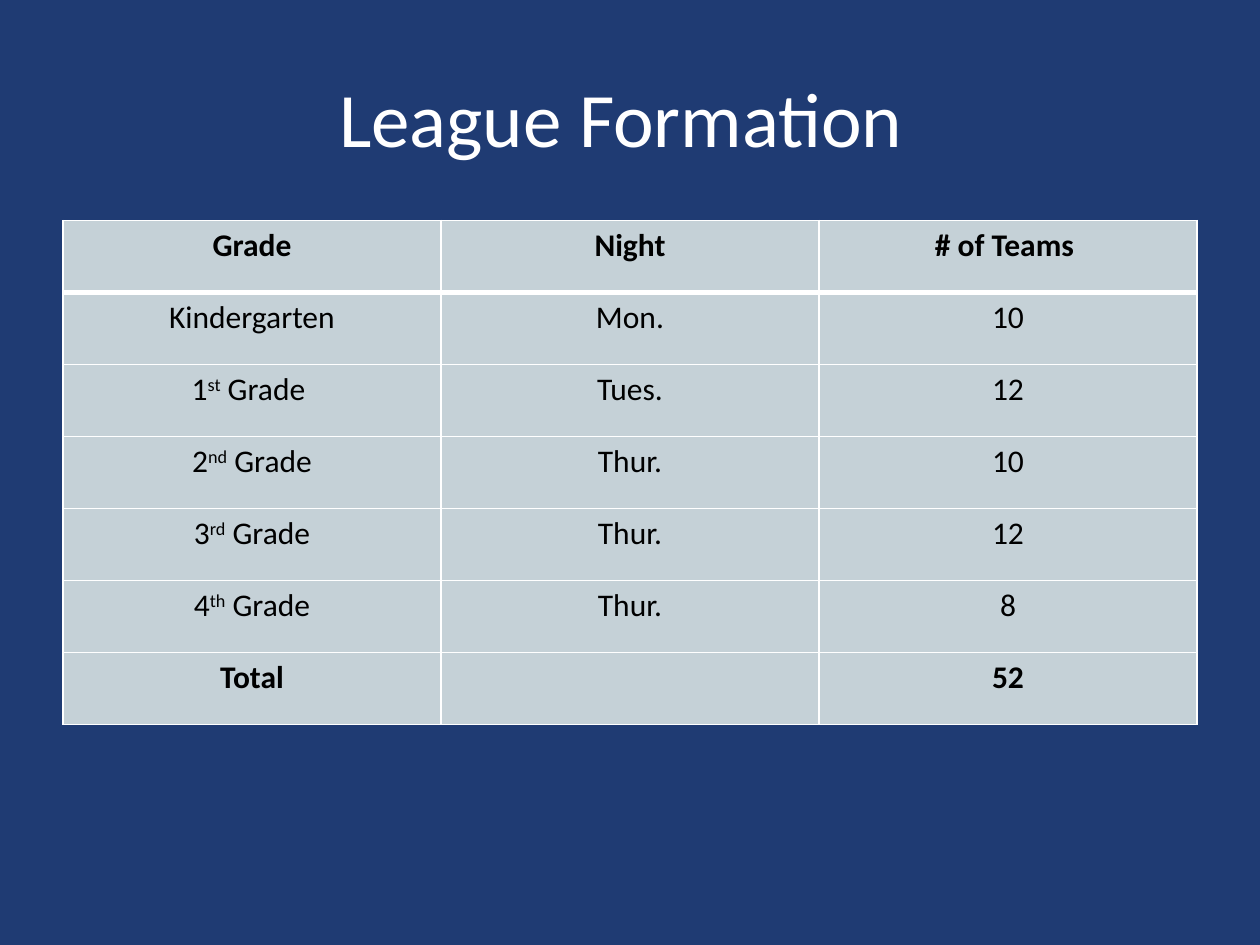
"""Build the League Formation slide with its table of grades, nights and teams."""
from lxml import etree
from pptx import Presentation
from pptx.dml.color import RGBColor
from pptx.enum.text import MSO_ANCHOR, PP_ALIGN
from pptx.oxml.ns import qn
from pptx.util import Inches, Pt

CENTER, MIDDLE = PP_ALIGN.CENTER, MSO_ANCHOR.MIDDLE

TITLE = "League Formation "
ROWS = [
    ("Grade", "Night", "# of Teams "),
    ("Kindergarten", "Mon.", "10"),
    (("1", "st", " Grade "), "Tues.", "12"),
    (("2", "nd", " Grade"), "Thur.", "10"),
    (("3", "rd", " Grade"), "Thur.", "12"),
    (("4", "th", " Grade"), "Thur.", "8"),
    ("Total", "", "52"),
]
THEME = {
    "back": "1F3B73", "cell": "C5D1D7", "line": "FFFFFF",
    "title": {"name": "Calibri", "size": Pt(44), "color": "FFFFFF"},
    "body": {"name": "Calibri", "size": Pt(18), "color": "000000", "bold": False},
    "head": {"name": "Calibri", "size": Pt(18), "color": "000000", "bold": True},
    "thin": Pt(1), "thick": Pt(3), "raise": "30000",
}
WIDE, HIGH = Inches(10), Inches(7.5)
LEFT, SPAN = WIDE // 20, WIDE * 9 // 10
TITLE_TOP, TITLE_HIGH = HIGH // 25, HIGH // 6
GRID_TOP, GRID_HIGH = Inches(1.75), Inches(4)


def style(font, look):
    for key, value in look.items():
        if key == "color":
            font.color.rgb = RGBColor.from_string(value)
        else:
            setattr(font, key, value)


def write(para, text, look):
    para.alignment = CENTER
    parts = (text,) if isinstance(text, str) else text
    for i, part in enumerate(parts):
        if part:
            run = para.add_run()
            run.text = part
            style(run.font, look)
            if i == 1:
                run.font._element.set("baseline", THEME["raise"])


def edge(cell, sides):
    props = cell._tc.get_or_add_tcPr()
    for side, width in sides.items():
        line = etree.SubElement(props, qn(f"a:ln{side}"), w=str(width))
        fill = etree.SubElement(line, qn("a:solidFill"))
        etree.SubElement(fill, qn("a:srgbClr"), val=THEME["line"])


def add_title(slide):
    frame = slide.shapes.add_textbox(LEFT, TITLE_TOP, SPAN, TITLE_HIGH).text_frame
    frame.word_wrap = True
    frame.vertical_anchor = MIDDLE
    write(frame.paragraphs[0], TITLE, THEME["title"])


def add_grid(slide):
    count = len(ROWS)
    grid = slide.shapes.add_table(
        count, len(ROWS[0]), LEFT, GRID_TOP, SPAN, GRID_HIGH).table
    thin, thick = THEME["thin"], THEME["thick"]
    for r, row in enumerate(ROWS):
        grid.rows[r].height = GRID_HIGH // count
        look = THEME["head" if r in (0, count - 1) else "body"]
        sides = {"L": thin, "R": thin,
                 "T": thick if r == 1 else thin,
                 "B": thick if r == 0 else thin}
        for c, text in enumerate(row):
            cell = grid.cell(r, c)
            edge(cell, sides)
            cell.fill.solid()
            cell.fill.fore_color.rgb = RGBColor.from_string(THEME["cell"])
            write(cell.text_frame.paragraphs[0], text, look)


def main():
    deck = Presentation()
    deck.slide_width, deck.slide_height = WIDE, HIGH
    slide = deck.slides.add_slide(deck.slide_layouts[6])
    back = slide.background.fill
    back.solid()
    back.fore_color.rgb = RGBColor.from_string(THEME["back"])
    add_title(slide)
    add_grid(slide)
    deck.save("out.pptx")


if __name__ == "__main__":
    main()
